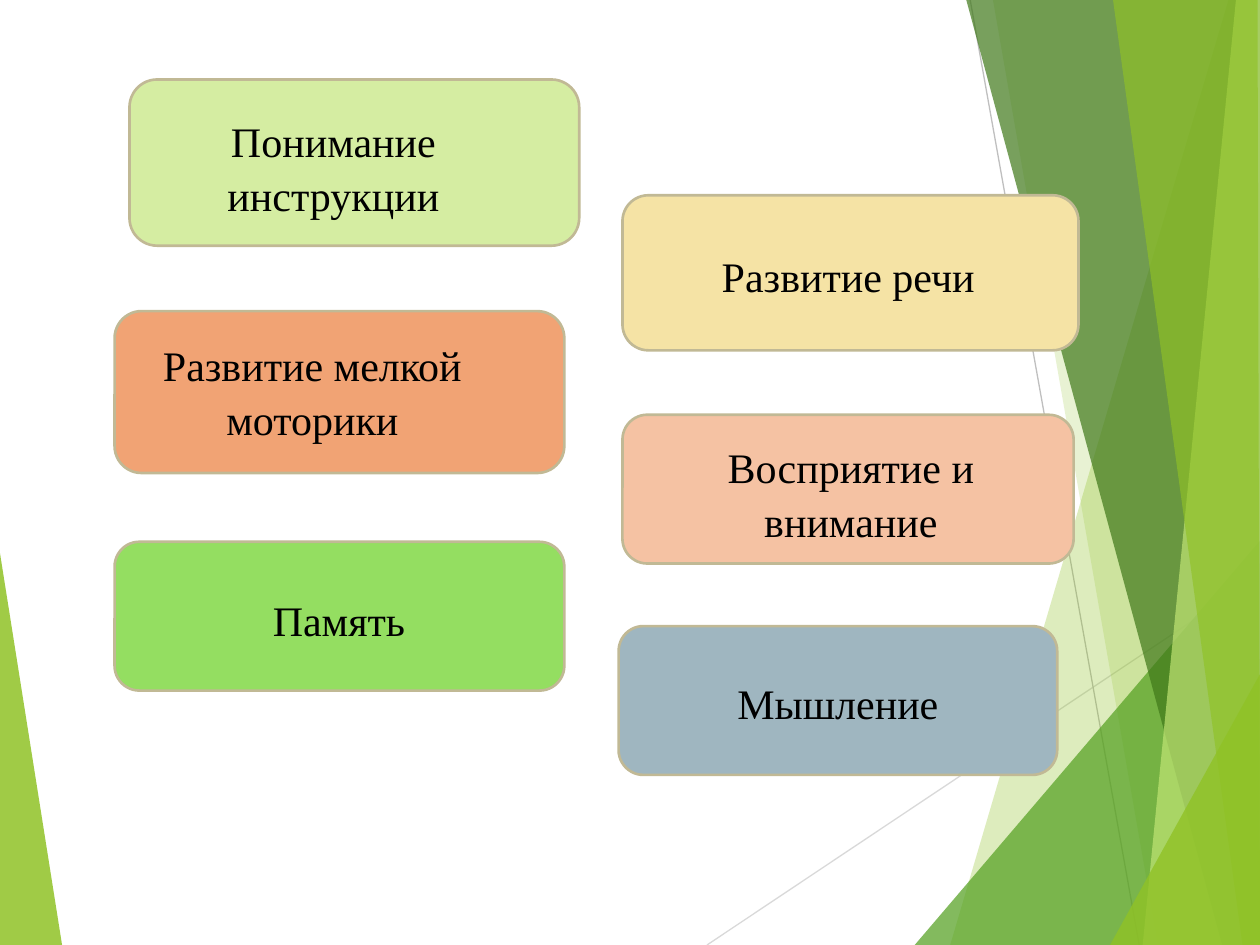
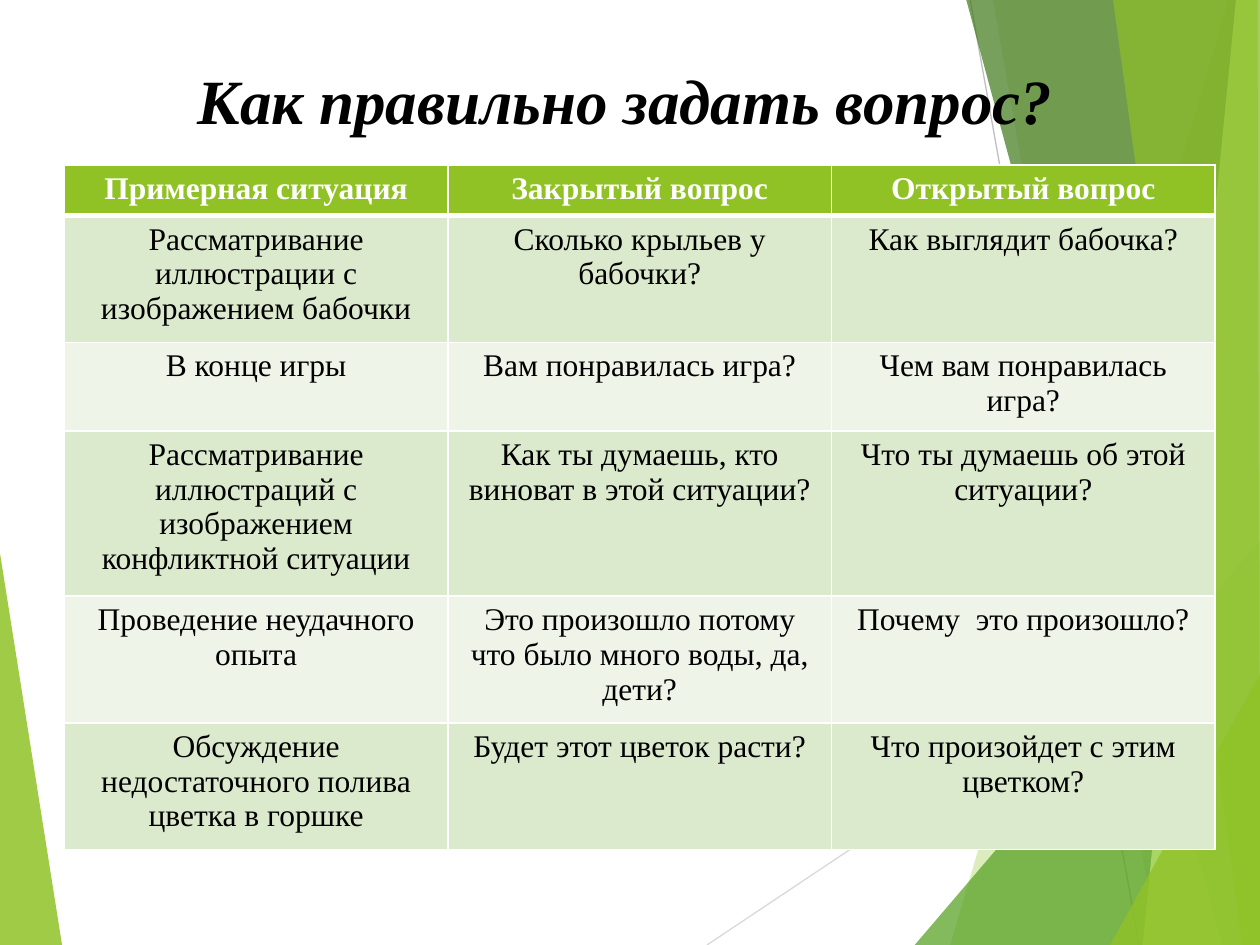
from itertools import product

from lxml.etree import SubElement
from pptx import Presentation
from pptx.dml.color import RGBColor
from pptx.enum.shapes import MSO_CONNECTOR, MSO_SHAPE
from pptx.enum.text import PP_ALIGN
from pptx.oxml import parse_xml
from pptx.oxml.ns import nsdecls, qn
from pptx.util import Pt

FONT = "Times New Roman"
WIDTH, HEIGHT = 720, 540
SLIDE_BOX = (0, 0, WIDTH, HEIGHT)
BLACK, WHITE = "000000", "FFFFFF"
GREEN, DARK_GREEN = "90C226", "3F7819"
LEAF_GREEN, PALE_GREEN = "54A021", "C0E474"
CARD_BORDER = "C1B995"
BAND_FILLS = ("EEF4E8", "DBE9CD")

RAYS = [
    ((404, 540), (720, 329), "D9D9D9"),
    ((554.4, 0), (651, 540), "BFBFBF"),
]
FACETS = [
    ([(0, 316), (35.5, 540), (0, 540)], GREEN, 85),
    ([(702, 0), (543, 540), (720, 540), (720, 0)], GREEN, 30),
    ([(567.4, 0), (661.7, 540), (720, 540), (720, 0)], GREEN, 20),
    ([(522.7, 540), (720, 309), (720, 540)], LEAF_GREEN, 72),
    ([(552.2, 0), (698.4, 540), (720, 540), (720, 0)], DARK_GREEN, 70),
    ([(706.3, 0), (653, 540), (720, 540), (720, 0)], PALE_GREEN, 70),
    ([(636, 0), (710, 540), (720, 540), (718.6, 0)], GREEN, 65),
    ([(634.3, 540), (720, 385.2), (720, 540)], GREEN, 80),
]

SKILL_CARDS = [
    ("Понимание инструкции", "D5EDA2", (74, 45.4, 257, 95), (18, 15, 197, 66)),
    ("Развитие мелкой моторики", "F1A374", (65.5, 177.8, 257, 92.5), (11.5, 10.8, 203, 66)),
    ("Память", "94DE61", (65.5, 309.6, 257, 85), (26.7, 24.5, 203, 36)),
    ("Развитие речи", "F5E3A5", (355.7, 111.6, 260.6, 88.6), (6.5, 26, 245, 36)),
    ("Восприятие и внимание", "F5C2A3", (355.7, 237, 257.8, 85), (8, 10, 245, 66)),
    ("Мышление", "9FB6C0", (353.5, 357.8, 250.6, 85), (23.8, 23.8, 203, 36)),
]

QUESTION_ROWS = [
    ("Примерная ситуация", "Закрытый вопрос", "Открытый вопрос"),
    ("Рассматривание иллюстрации с изображением бабочки",
     "Сколько крыльев у бабочки?", "Как выглядит бабочка?"),
    ("В конце игры", "Вам понравилась игра?", "Чем вам понравилась игра?"),
    ("Рассматривание иллюстраций с изображением конфликтной ситуации",
     "Как ты думаешь, кто виноват в этой ситуации?", "Что ты думаешь об этой ситуации?"),
    ("Проведение неудачного опыта",
     "Это произошло потому что было много воды, да, дети?", "Почему  это произошло?"),
    ("Обсуждение недостаточного полива цветка в горшке",
     "Будет этот цветок расти?", "Что произойдет с этим цветком?"),
]
ROW_HEIGHTS = (28.8, 72.5, 50.5, 94.4, 72.5, 72.5)


def color(value):
    return RGBColor.from_string(value)


def points(values):
    return [Pt(value) for value in values]


def fill_solid(fill, value, opacity=100):
    fill.solid()
    fill.fore_color.rgb = color(value)
    if opacity < 100:
        solid = fill.fore_color._xFill
        SubElement(solid[0], qn("a:alpha"), val=str(opacity * 1000))


def write_text(frame, text, size=24, value=BLACK, bold=False, italic=False, spacing=None):
    frame.word_wrap = True
    paragraph = frame.paragraphs[0]
    paragraph.alignment = PP_ALIGN.CENTER
    paragraph.line_spacing = spacing
    run = paragraph.add_run()
    run.text = text
    run.font.name = FONT
    run.font.size = Pt(size)
    run.font.color.rgb = color(value)
    run.font.bold = bold
    run.font.italic = italic


def add_text(slide, text, box, **text_format):
    text_box = slide.shapes.add_textbox(*points(box))
    write_text(text_box.text_frame, text, **text_format)


def add_ray(slide, start, end, value):
    connector = slide.shapes.add_connector(MSO_CONNECTOR.STRAIGHT, *points(start + end))
    connector.line.color.rgb = color(value)
    connector.line.width = Pt(0.75)
    SubElement(connector._element.spPr, qn("a:effectLst"))


def add_facet(slide, outline, value, opacity):
    start, *others = [points(corner) for corner in outline]
    builder = slide.shapes.build_freeform(*start)
    builder.add_line_segments(others, close=True)
    shape = builder.convert_to_shape()
    shape.shadow.inherit = False
    shape.line.fill.background()
    fill_solid(shape.fill, value, opacity)


def add_backdrop(slide, box):
    left, top, width, height = box

    def place(point):
        return left + point[0] * width / WIDTH, top + point[1] * height / HEIGHT

    left_facet, *right_facets = FACETS
    add_facet(slide, [place(corner) for corner in left_facet[0]], *left_facet[1:])
    for start, end, value in RAYS:
        add_ray(slide, place(start), place(end), value)
    for outline, value, opacity in right_facets:
        add_facet(slide, [place(corner) for corner in outline], value, opacity)


def add_card(slide, text, value, box, label_box):
    card = slide.shapes.add_shape(MSO_SHAPE.FLOWCHART_ALTERNATE_PROCESS, *points(box))
    card.shadow.inherit = False
    fill_solid(card.fill, value)
    card.line.color.rgb = color(CARD_BORDER)
    card.line.width = Pt(1.5)
    left, top, width, height = label_box
    add_text(slide, text, (box[0] + left, box[1] + top, width, height), spacing=1.07)


def set_borders(cell, top=1, bottom=1):
    properties = cell._tc.get_or_add_tcPr()
    for index, (side, width) in enumerate((("L", 1), ("R", 1), ("T", top), ("B", bottom))):
        properties.insert(index, parse_xml(
            f'<a:ln{side} {nsdecls("a")} w="{Pt(width)}"><a:solidFill>'
            f'<a:srgbClr val="{WHITE}"/></a:solidFill></a:ln{side}>'))


def add_question_table(slide, box):
    row_count, column_count = len(QUESTION_ROWS), len(QUESTION_ROWS[0])
    table = slide.shapes.add_table(row_count, column_count, *points(box)).table
    for row, height in zip(table.rows, ROW_HEIGHTS):
        row.height = Pt(height)
    for row, column in product(range(row_count), range(column_count)):
        cell = table.cell(row, column)
        header = row == 0
        fill_solid(cell.fill, GREEN if header else BAND_FILLS[row % 2])
        set_borders(cell, top=3 if row == 1 else 1, bottom=3 if header else 1)
        write_text(cell.text_frame, QUESTION_ROWS[row][column], size=18,
                   value=WHITE if header else BLACK, bold=header)


def add_slide(presentation):
    slide = presentation.slides.add_slide(presentation.slide_layouts[6])
    add_backdrop(slide, SLIDE_BOX)
    return slide


def build_skills_slide(presentation):
    slide = add_slide(presentation)
    for card in SKILL_CARDS:
        add_card(slide, *card)


def build_questions_slide(presentation):
    slide = add_slide(presentation)
    add_question_table(slide, (36.8, 94.4, 657.6, sum(ROW_HEIGHTS)))
    add_text(slide, "Как правильно задать вопрос?", (87.8, 31.7, 538.6, 51),
             size=36, bold=True, italic=True)


def main():
    presentation = Presentation()
    presentation.slide_width = Pt(WIDTH)
    presentation.slide_height = Pt(HEIGHT)
    build_skills_slide(presentation)
    build_questions_slide(presentation)
    presentation.save("out.pptx")


if __name__ == "__main__":
    main()
